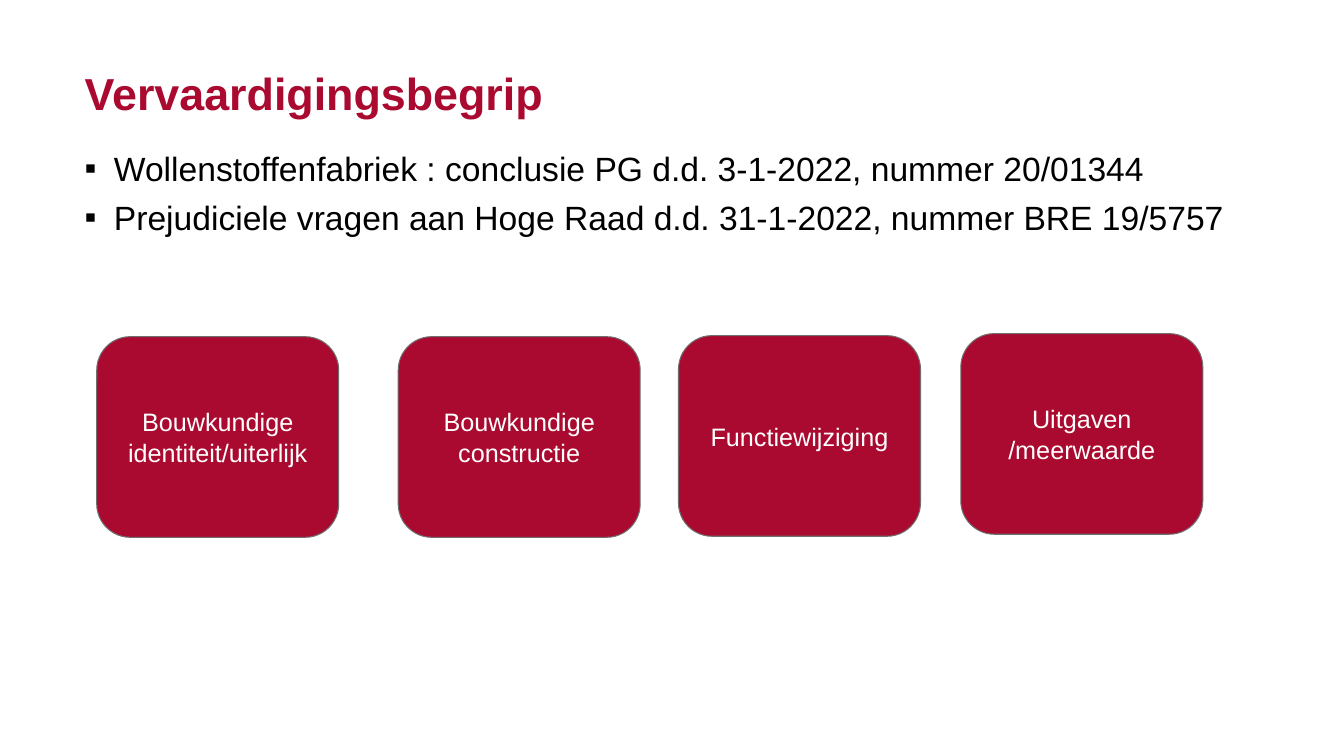
from lxml.etree import SubElement
from pptx import Presentation
from pptx.dml.color import RGBColor
from pptx.enum.shapes import MSO_SHAPE
from pptx.enum.text import MSO_ANCHOR, PP_ALIGN
from pptx.oxml.ns import qn
from pptx.util import Inches, Pt

TITLE = "Vervaardigingsbegrip"
CASES = [
    "Wollenstoffenfabriek : conclusie PG d.d. 3-1-2022, nummer 20/01344",
    "Prejudiciele vragen aan Hoge Raad d.d. 31-1-2022, nummer BRE 19/5757",
]
# Criterion, left, top
CRITERIA = [
    ("Bouwkundige identiteit/uiterlijk", 0.96, 3.34),
    ("Bouwkundige constructie", 3.95, 3.34),
    ("Functiewijziging", 6.73, 3.33),
    ("Uitgaven /meerwaarde", 9.53, 3.31),
]
CARD_WIDTH, CARD_HEIGHT = 2.4, 1.99
LEFT = 0.84
COLORS = {"red": "AA0A2F", "gray": "706F6F", "black": "000000", "white": "FFFFFF"}


def color(name):
    return RGBColor.from_string(COLORS[name])


def set_font(paragraph, size, color_name, bold=False):
    font = paragraph.font
    font.name, font.size, font.bold = "Arial", Pt(size), bold
    font.color.rgb = color(color_name)


def clear_margins(frame):
    frame.margin_left = frame.margin_right = 0
    frame.margin_top = frame.margin_bottom = 0
    frame.word_wrap = True


def add_bullet(paragraph, indent):
    properties = paragraph._p.get_or_add_pPr()
    properties.set("marL", str(indent))
    properties.set("indent", str(-indent))
    SubElement(properties, qn("a:buFont"), typeface="Arial")
    SubElement(properties, qn("a:buChar"), char="▪")


def add_title(slide):
    title = slide.shapes.title
    title.left, title.top = Inches(LEFT), Inches(0.6)
    title.width, title.height = Inches(10), Inches(0.59)
    frame = title.text_frame
    clear_margins(frame)
    frame.vertical_anchor = MSO_ANCHOR.BOTTOM
    frame.text = TITLE
    heading = frame.paragraphs[0]
    heading.alignment = PP_ALIGN.LEFT
    heading.line_spacing = 0.9
    set_font(heading, 32, "red", bold=True)


def add_cases(slide):
    frame = slide.shapes.add_textbox(
        Inches(LEFT), Inches(1.47), Inches(11.54), Inches(5.28)).text_frame
    clear_margins(frame)
    frame.text = "\n".join(CASES)
    for index, case in enumerate(frame.paragraphs):
        if index:
            case.space_before = Pt(6)
        add_bullet(case, Inches(0.29))
        set_font(case, 24, "black")


def add_criterion(slide, text, left, top):
    card = slide.shapes.add_shape(
        MSO_SHAPE.ROUNDED_RECTANGLE, Inches(left), Inches(top),
        Inches(CARD_WIDTH), Inches(CARD_HEIGHT))
    card.shadow.inherit = False
    card.fill.solid()
    card.fill.fore_color.rgb = color("red")
    card.line.color.rgb = color("gray")
    card.line.width = Pt(0.75)
    frame = card.text_frame
    frame.word_wrap = True
    frame.vertical_anchor = MSO_ANCHOR.MIDDLE
    frame.text = text
    label = frame.paragraphs[0]
    label.alignment = PP_ALIGN.CENTER
    set_font(label, 18, "white")


def main():
    deck = Presentation()
    deck.slide_width, deck.slide_height = Inches(13.33), Inches(7.5)
    slide = deck.slides.add_slide(deck.slide_layouts.get_by_name("Title Only"))
    add_title(slide)
    add_cases(slide)
    for text, left, top in CRITERIA:
        add_criterion(slide, text, left, top)
    deck.save("out.pptx")


if __name__ == "__main__":
    main()
